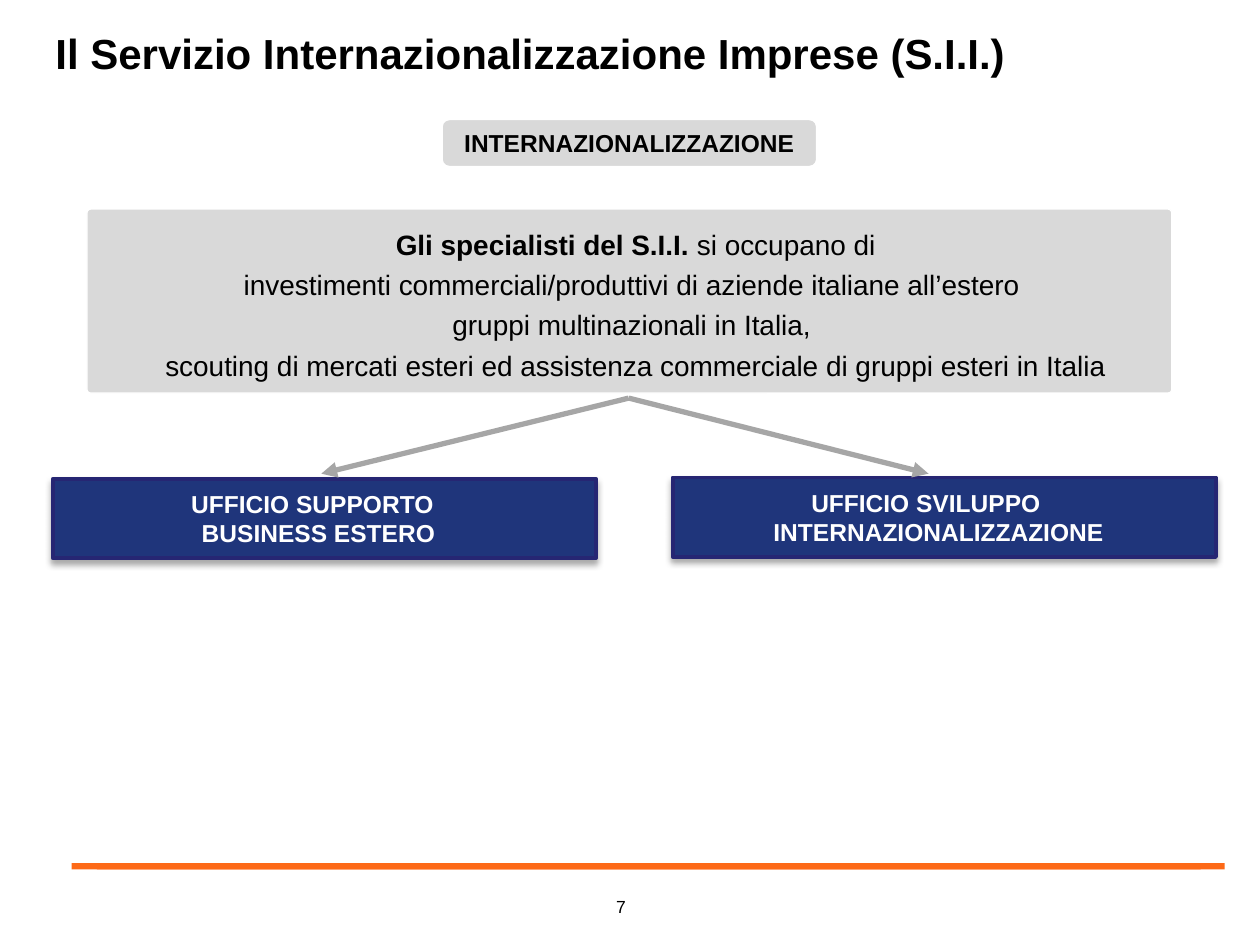
from dataclasses import dataclass

import pptx
import pptx.dml.color
import pptx.enum.shapes
import pptx.enum.text
import pptx.oxml
import pptx.oxml.ns
import pptx.util
from lxml import etree

Pt = pptx.util.Pt
RGBColor = pptx.dml.color.RGBColor
ShapeKind = pptx.enum.shapes.MSO_SHAPE
Align = pptx.enum.text.PP_ALIGN
Anchor = pptx.enum.text.MSO_ANCHOR
qn = pptx.oxml.ns.qn

BLACK = RGBColor(0x00, 0x00, 0x00)
WHITE = RGBColor(0xFF, 0xFF, 0xFF)
ORANGE = RGBColor(0xFD, 0x69, 0x17)
PALE_GREY = RGBColor(0xD9, 0xD9, 0xD9)
ARROW_GREY = RGBColor(0xA6, 0xA6, 0xA6)
NAVY = RGBColor(0x1F, 0x35, 0x7B)
NAVY_EDGE = RGBColor(0x26, 0x26, 0x73)
FONT = "Arial"


@dataclass(frozen=True)
class Frame:
    left: float
    top: float
    width: float
    height: float

    def lengths(self):
        return Pt(self.left), Pt(self.top), Pt(self.width), Pt(self.height)


@dataclass(frozen=True)
class Office:
    left: float
    top: float
    lines: tuple[tuple[str, float], ...]


OFFICES = (
    Office(384.5, 272.9, (("UFFICIO SVILUPPO", 72), ("INTERNAZIONALIZZAZIONE", 50.4))),
    Office(30.2, 273.6, (("UFFICIO SUPPORTO", 72), ("BUSINESS ESTERO", 78))),
)
ARROW_START = (359.3, 227.5)
ARROW_ENDS = ((183.6, 270.7), (530.6, 270.7))
RULES = (Frame(41, 493.2, 658.8, 3.6), Frame(55.4, 493.2, 630.7, 3.6))
SPECIALIST_LINES = (
    "investimenti commerciali/produttivi di aziende italiane all’estero ",
    "gruppi multinazionali in Italia, ",
    "scouting di mercati esteri ed assistenza commerciale di gruppi esteri in Italia",
)


def add_span(para, text: str, size: float, color: RGBColor = BLACK, bold: bool = False) -> None:
    span = para.add_run()
    span.text = text
    span.font.name = FONT
    span.font.size = Pt(size)
    span.font.bold = bold
    span.font.color.rgb = color


def indent(para, points: float) -> None:
    properties = para._p.get_or_add_pPr()
    properties.set("marL", str(Pt(points)))
    properties.set("indent", "0")


def add_box(page, kind, frame: Frame, fill: RGBColor,
            edge: RGBColor | None = None, edge_width: float = 0):
    box = page.shapes.add_shape(kind, *frame.lengths())
    box.fill.solid()
    box.fill.fore_color.rgb = fill
    if edge is None:
        box.line.fill.background()
    else:
        box.line.color.rgb = edge
        box.line.width = Pt(edge_width)
    box.shadow.inherit = False
    box.text_frame.word_wrap = True
    box.text_frame.vertical_anchor = Anchor.MIDDLE
    return box


def add_drop_shadow(box) -> None:
    effects = box._element.spPr.find(qn("a:effectLst"))
    shadow = etree.SubElement(effects, qn("a:outerShdw"), blurRad=str(Pt(3.5)),
                              dist=str(Pt(2.2)), dir="5400000", rotWithShape="0")
    color = etree.SubElement(shadow, qn("a:srgbClr"), val=str(BLACK))
    etree.SubElement(color, qn("a:alpha"), val="32000")


def add_office(page, office: Office) -> None:
    frame = Frame(office.left, office.top, 310.3, 45.4)
    box = add_box(page, ShapeKind.RECTANGLE, frame, NAVY, NAVY_EDGE, 2.25)
    add_drop_shadow(box)
    for index, (text, margin) in enumerate(office.lines):
        para = box.text_frame.add_paragraph() if index else box.text_frame.paragraphs[0]
        para.alignment = Align.LEFT
        indent(para, margin)
        add_span(para, text, 14, WHITE, True)


def add_arrow(page, start: tuple[float, float], end: tuple[float, float]) -> None:
    arrow = page.shapes.add_connector(pptx.enum.shapes.MSO_CONNECTOR.STRAIGHT,
                                      *(Pt(value) for value in start + end))
    arrow.line.color.rgb = ARROW_GREY
    arrow.line.width = Pt(3)
    etree.SubElement(arrow.line._get_or_add_ln(), qn("a:tailEnd"), type="triangle")
    etree.SubElement(arrow._element.spPr, qn("a:effectLst"))


def add_title(page) -> None:
    title = page.shapes.title
    title.left, title.top, title.width, title.height = Frame(24.5, 12.2, 668.9, 36.7).lengths()
    title.text_frame.word_wrap = True
    title.text_frame.vertical_anchor = Anchor.TOP
    para = title.text_frame.paragraphs[0]
    para.alignment = Align.LEFT
    add_span(para, "Il Servizio Internazionalizzazione Imprese (S.I.I.)", 24, bold=True)


def add_page_number(page) -> None:
    box = page.shapes.add_textbox(*Frame(321.8, 508.3, 66.2, 23.8).lengths())
    box.text_frame.word_wrap = True
    para = box.text_frame.paragraphs[0]
    para.alignment = Align.CENTER
    add_span(para, "7", 10)


def add_specialists(page) -> None:
    box = add_box(page, ShapeKind.ROUNDED_RECTANGLE, Frame(49.7, 119.5, 619.9, 105.1),
                  PALE_GREY, WHITE, 0.75)
    box.adjustments[0] = 0.02
    para = box.text_frame.paragraphs[0]
    indent(para, 7.2)
    para.alignment = Align.CENTER
    para.line_spacing = 1.2
    add_span(para, "Gli specialisti del S.I.I. ", 16, bold=True)
    add_span(para, "si occupano di", 16)
    for line in SPECIALIST_LINES:
        para.add_line_break()
        add_span(para, line, 16)


def add_heading(page) -> None:
    box = add_box(page, ShapeKind.ROUNDED_RECTANGLE, Frame(252, 67.7, 215.3, 28.1),
                  PALE_GREY, WHITE, 2)
    para = box.text_frame.paragraphs[0]
    para.alignment = Align.CENTER
    add_span(para, "INTERNAZIONALIZZAZIONE", 14, bold=True)


def main() -> None:
    deck = pptx.Presentation()
    deck.slide_width, deck.slide_height = Pt(720), Pt(540)
    page = deck.slides.add_slide(deck.slide_layouts.get_by_name("Title Only"))
    add_title(page)
    for rule in RULES:
        add_box(page, ShapeKind.RECTANGLE, rule, ORANGE)
    add_page_number(page)
    add_specialists(page)
    for office in OFFICES:
        add_office(page, office)
    for end in ARROW_ENDS:
        add_arrow(page, ARROW_START, end)
    add_heading(page)
    deck.save("out.pptx")


if __name__ == "__main__":
    main()
